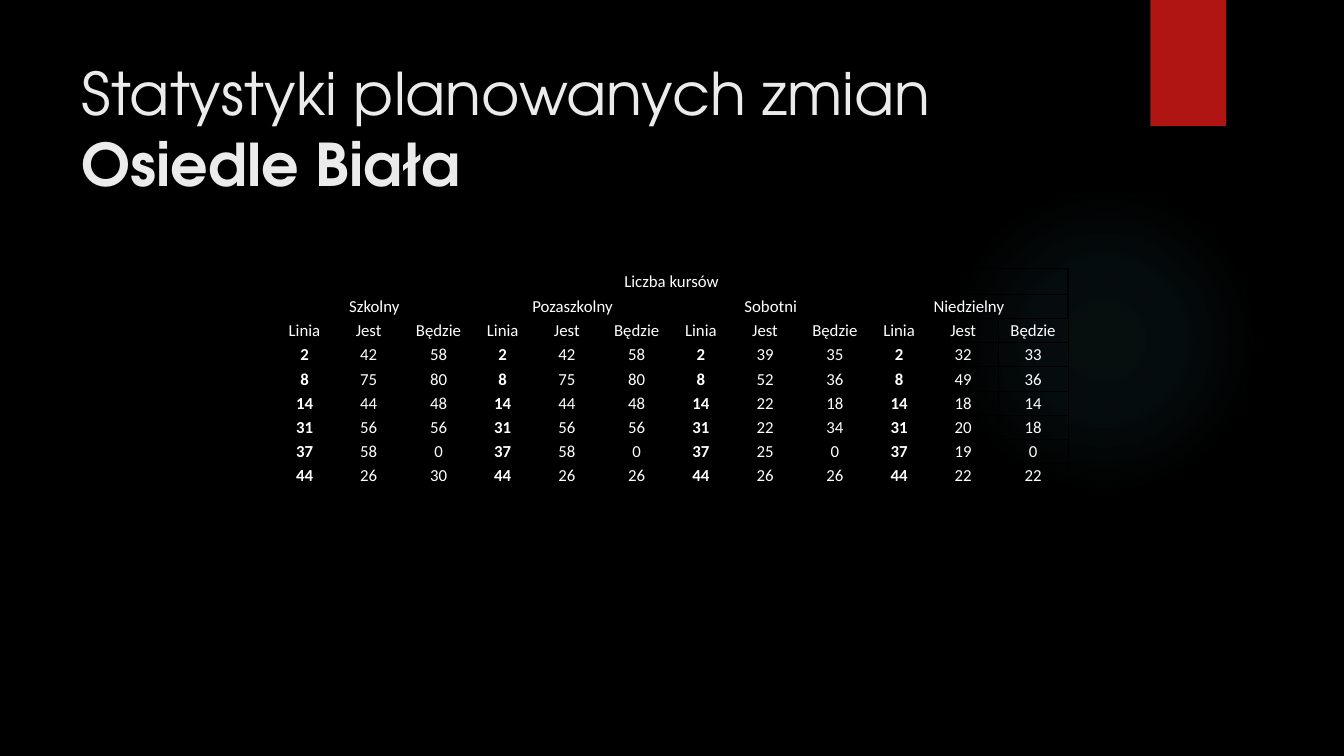
from dataclasses import dataclass

import pptx
import pptx.dml.color
import pptx.enum.shapes
import pptx.enum.text
import pptx.oxml
import pptx.oxml.ns
import pptx.util

Pt = pptx.util.Pt
Color = pptx.dml.color.RGBColor.from_string
Shape = pptx.enum.shapes.MSO_SHAPE
Anchor = pptx.enum.text.MSO_ANCHOR
Align = pptx.enum.text.PP_ALIGN


@dataclass(frozen=True)
class Theme:
    background: str = "000000"
    grid: str = "000000"
    accent: str = "B01513"
    glow: str = "50B9C1"
    title: str = "EBEBEB"
    body: str = "FFFFFF"
    title_font: str = "TeX Gyre Adventor"
    body_font: str = "Calibri"
    title_size: float = 42
    body_size: float = 12
    thin: float = 0.5
    thick: float = 1


THEME = Theme()
GLOW_STOPS = ((0, 7), (36, 6), (69, 0))  # position and opacity, percent

TABLE_TITLE = "Liczba kursów"
HEADINGS = ("Linia", "Jest", "Będzie")
COLUMN_WIDTHS = (41.8, 49.9, 49.9)
TITLE_ROW_HEIGHT, ROW_HEIGHT = 18.3, 17.25
BUS_LINES = (2, 8, 14, 31, 37, 44)
WEEKDAY_COURSES = ((42, 58), (75, 80), (44, 48), (56, 56), (58, 0), (26, 30))
COURSES = {
    "Szkolny": WEEKDAY_COURSES,
    "Pozaszkolny": WEEKDAY_COURSES[:-1] + ((26, 26),),
    "Sobotni": ((39, 35), (52, 36), (22, 18), (22, 34), (25, 0), (26, 26)),
    "Niedzielny": ((32, 33), (49, 36), (18, 14), (20, 18), (19, 0), (22, 22)),
}


def apply_format(target, values):
    for name, value in values.items():
        setattr(target, name, value)


def add_span(para, text, color, **font):
    span = para.add_run()
    span.text = text
    apply_format(span.font, font)
    span.font.color.rgb = Color(color)


def add_plain_shape(page, kind, left, top, width, height, fill):
    shape = page.shapes.add_shape(kind, Pt(left), Pt(top), Pt(width), Pt(height))
    shape.shadow.inherit = False
    shape.fill.solid()
    shape.fill.fore_color.rgb = Color(fill)
    shape.line.fill.background()
    return shape


def add_glow(page, left, top, size):
    """Add a circle whose colour fades out from its centre."""
    circle = add_plain_shape(page, Shape.OVAL, left, top, size, size, THEME.glow)
    stops = "".join(
        f'<a:gs pos="{position * 1000}"><a:srgbClr val="{THEME.glow}">'
        f'<a:alpha val="{opacity * 1000}"/></a:srgbClr></a:gs>'
        for position, opacity in GLOW_STOPS
    )
    gradient = pptx.oxml.parse_xml(
        f'<a:gradFill {pptx.oxml.ns.nsdecls("a")}><a:gsLst>{stops}</a:gsLst>'
        '<a:path path="circle"><a:fillToRect l="50000" t="50000" r="50000" b="50000"/>'
        "</a:path></a:gradFill>"
    )
    properties = circle.element.spPr
    properties.replace(properties.find(pptx.oxml.ns.qn("a:solidFill")), gradient)


def add_title(page, first_line, second_line):
    box = page.shapes.add_textbox(Pt(51), Pt(36), Pt(741), Pt(110))
    apply_format(box.text_frame, {"word_wrap": True, "vertical_anchor": Anchor.MIDDLE})
    para = box.text_frame.paragraphs[0]
    font = {"name": THEME.title_font, "size": Pt(THEME.title_size)}
    add_span(para, first_line, THEME.title, **font)
    para.add_line_break()
    add_span(para, second_line, THEME.title, bold=True, **font)


def set_borders(cell, widths):
    """Draw the left, right, top and bottom borders, in that order."""
    properties = cell._tc.get_or_add_tcPr()
    for index, (side, width) in enumerate(zip("LRTB", widths)):
        border = pptx.oxml.parse_xml(
            f'<a:ln{side} {pptx.oxml.ns.nsdecls("a")} w="{Pt(width)}"><a:solidFill>'
            f'<a:srgbClr val="{THEME.grid}"/></a:solidFill></a:ln{side}>'
        )
        properties.insert(index, border)


def border_widths(row, column):
    thin, thick = THEME.thin, THEME.thick
    if row == 0:
        return (thick,) * 4
    if row == 1:
        return thick, thick, thick, thin
    return (thick if column == 0 else thin), thin, thin, thin


def fill_cell(cell, text, bold):
    apply_format(cell, {
        "vertical_anchor": Anchor.MIDDLE,
        "margin_left": Pt(0.72),
        "margin_right": Pt(0.72),
        "margin_top": Pt(0.72),
        "margin_bottom": Pt(0),
    })
    para = cell.text_frame.paragraphs[0]
    para.alignment = Align.CENTER
    apply_format(para.font, {"size": Pt(THEME.body_size), "name": THEME.body_font})
    if text:
        add_span(para, text, THEME.body, bold=bold,
                 name=THEME.body_font, size=Pt(THEME.body_size))


def course_rows():
    """Return the table's texts, row by row; merged places are empty."""
    group = len(HEADINGS)
    rows = [[TABLE_TITLE] + [""] * (group * len(COURSES) - 1)]
    rows.append([text for day in COURSES for text in (day, *[""] * (group - 1))])
    rows.append(list(HEADINGS) * len(COURSES))
    for index, line in enumerate(BUS_LINES):
        rows.append([str(value) for day in COURSES.values()
                     for value in (line, *day[index])])
    return rows


def add_course_table(page, left, top):
    texts = course_rows()
    group, total = len(HEADINGS), len(texts[0])
    widths = COLUMN_WIDTHS * len(COURSES)
    heights = [TITLE_ROW_HEIGHT] + [ROW_HEIGHT] * (len(texts) - 1)
    table = page.shapes.add_table(
        len(texts), total, Pt(left), Pt(top), Pt(sum(widths)), Pt(sum(heights))
    ).table
    apply_format(table, {"first_row": False, "horz_banding": False})
    for column, width in zip(table.columns, widths):
        column.width = Pt(width)
    for row, height in zip(table.rows, heights):
        row.height = Pt(height)
    for row, row_texts in enumerate(texts):
        for column, text in enumerate(row_texts):
            cell = table.cell(row, column)
            fill_cell(cell, text, bold=row > 2 and column % group == 0)
            cell.fill.background()
            set_borders(cell, border_widths(row, column))
    table.cell(0, 0).merge(table.cell(0, total - 1))
    for start in range(0, total, group):
        table.cell(1, start).merge(table.cell(1, start + group - 1))


def main():
    deck = pptx.Presentation()
    apply_format(deck, {"slide_width": Pt(960), "slide_height": Pt(540)})
    page = deck.slides.add_slide(deck.slide_layouts[6])
    page.background.fill.solid()
    page.background.fill.fore_color.rgb = Color(THEME.background)
    add_glow(page, 677.5, 131.8, 221.8)
    add_plain_shape(page, Shape.RECTANGLE, 821.8, 0, 54, 90, THEME.accent)
    add_title(page, "Statystyki planowanych zmian", "Osiedle Biała")
    add_course_table(page, 196.6, 192)
    deck.save("out.pptx")


if __name__ == "__main__":
    main()
